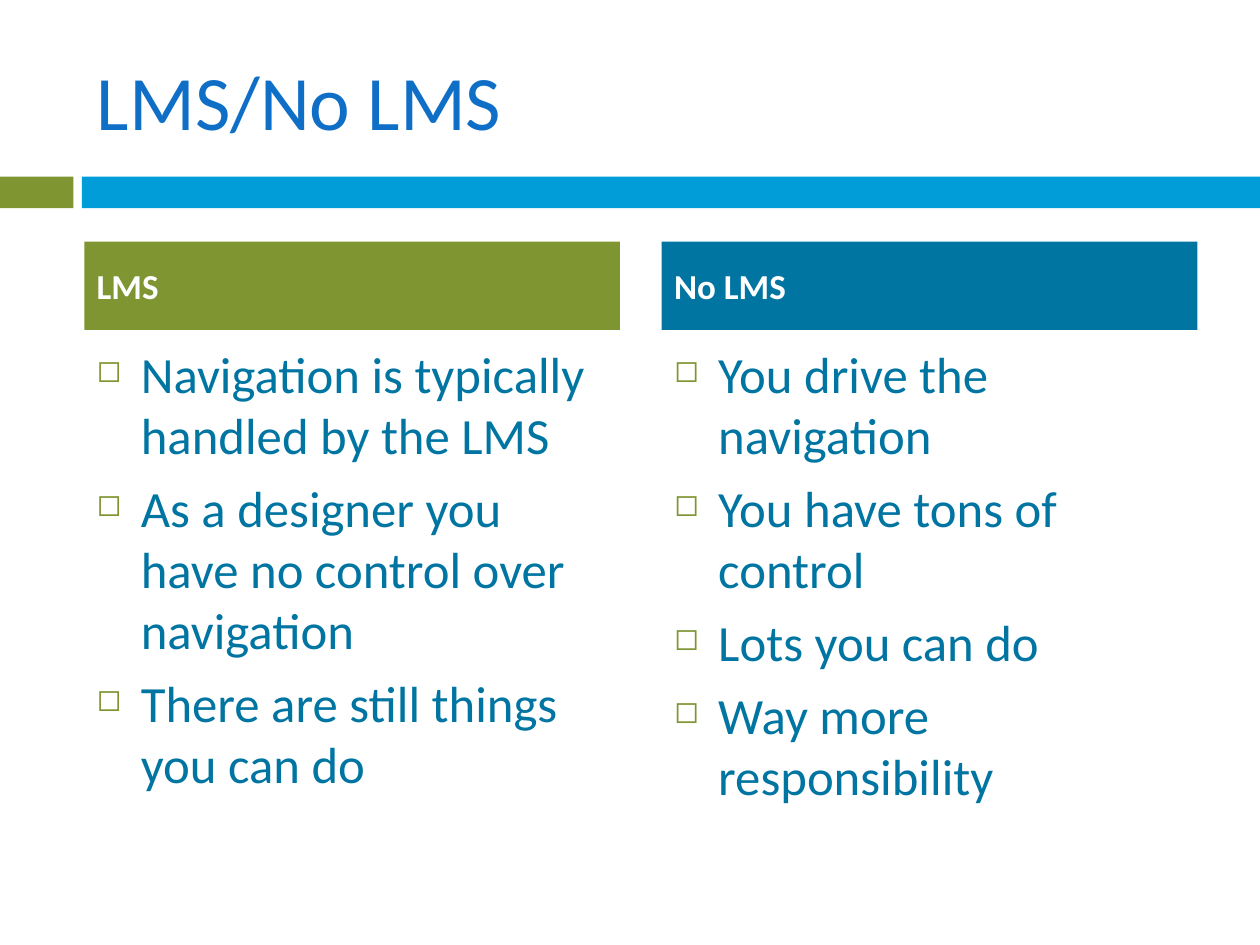
from lxml import etree
from pptx import Presentation
from pptx.dml.color import RGBColor
from pptx.enum.shapes import MSO_SHAPE
from pptx.enum.text import MSO_ANCHOR, MSO_AUTO_SIZE, PP_ALIGN
from pptx.oxml.ns import qn
from pptx.util import Cm, Pt

RECTANGLE = MSO_SHAPE.RECTANGLE
TOP, MIDDLE = MSO_ANCHOR.TOP, MSO_ANCHOR.MIDDLE
LEFT = PP_ALIGN.LEFT
NO_AUTOFIT = MSO_AUTO_SIZE.NONE
TITLE_ONLY = 5

COLORS = {
    "title": "0F6FC6",
    "green": "7E9532",
    "sky": "009DD9",
    "teal": "0075A2",
    "white": "FFFFFF",
}
FONT = "Calibri"
HANGING = Cm(0.89)

COLUMN_LEFT, COLUMN_STEP, COLUMN_WIDTH = 1.7, 11.64, 10.8
COLUMNS = [
    ("LMS", "green", [
        "Navigation is typically handled by the LMS",
        "As a designer you have no control over navigation",
        "There are still things you can do",
    ]),
    ("No LMS", "teal", [
        "You drive the navigation",
        "You have tons of control",
        "Lots you can do",
        "Way more responsibility",
    ]),
]


def rgb(color):
    return RGBColor.from_string(COLORS[color])


def add_bullet(paragraph, color):
    """Give the paragraph a hanging indent and a small square bullet."""
    props = paragraph._p.get_or_add_pPr()
    props.set("marL", str(HANGING))
    props.set("indent", str(-HANGING))
    bullet_color = etree.SubElement(props, qn("a:buClr"))
    etree.SubElement(bullet_color, qn("a:srgbClr"), val=COLORS[color])
    etree.SubElement(props, qn("a:buSzPct"), val="60000")
    etree.SubElement(props, qn("a:buChar"), char="◻")


def write(frame, lines, size, color, bold=False, anchor=MIDDLE, bullet=None, gap=0):
    frame.word_wrap = True
    frame.auto_size = NO_AUTOFIT
    frame.vertical_anchor = anchor
    for index, line in enumerate(lines):
        paragraph = frame.add_paragraph() if index else frame.paragraphs[0]
        if bullet:
            add_bullet(paragraph, bullet)
        paragraph.text = line
        paragraph.alignment = LEFT
        if index:
            paragraph.space_before = Pt(gap)
        font = paragraph.font
        font.name, font.size, font.bold = FONT, Pt(size), bold
        font.color.rgb = rgb(color)


class ComparisonSlide:
    def __init__(self, deck):
        self.slide = deck.slides.add_slide(deck.slide_layouts[TITLE_ONLY])

    def title(self, text, left, top, width, height):
        title = self.slide.shapes.title
        title.left, title.top = Cm(left), Cm(top)
        title.width, title.height = Cm(width), Cm(height)
        write(title.text_frame, [text], size=44, color="title")

    def bar(self, color, left, top, width, height):
        bar = self.slide.shapes.add_shape(
            RECTANGLE, Cm(left), Cm(top), Cm(width), Cm(height))
        bar.shadow.inherit = False
        bar.fill.solid()
        bar.fill.fore_color.rgb = rgb(color)
        bar.line.fill.background()
        return bar

    def heading(self, text, color, left, top, width, height):
        heading = self.bar(color, left, top, width, height)
        write(heading.text_frame, [text], size=20, color="white", bold=True)

    def bullets(self, lines, left, top, width, height):
        box = self.slide.shapes.add_textbox(
            Cm(left), Cm(top), Cm(width), Cm(height))
        write(box.text_frame, lines, size=29, color="teal",
              anchor=TOP, bullet="green", gap=7)


def main():
    deck = Presentation()
    deck.slide_width, deck.slide_height = Cm(25.4), Cm(19.05)
    page = ComparisonSlide(deck)
    page.bar("green", 0, 3.56, 1.48, 0.64)
    page.bar("sky", 1.65, 3.56, 23.75, 0.64)
    page.title("LMS/No LMS", 1.7, 0.64, 22.65, 2.75)
    for index, (heading, color, points) in enumerate(COLUMNS):
        left = COLUMN_LEFT + index * COLUMN_STEP
        page.heading(heading, color, left, 4.87, COLUMN_WIDTH, 1.78)
        page.bullets(points, left, 6.78, COLUMN_WIDTH, 9.95)
    deck.save("out.pptx")


if __name__ == "__main__":
    main()
